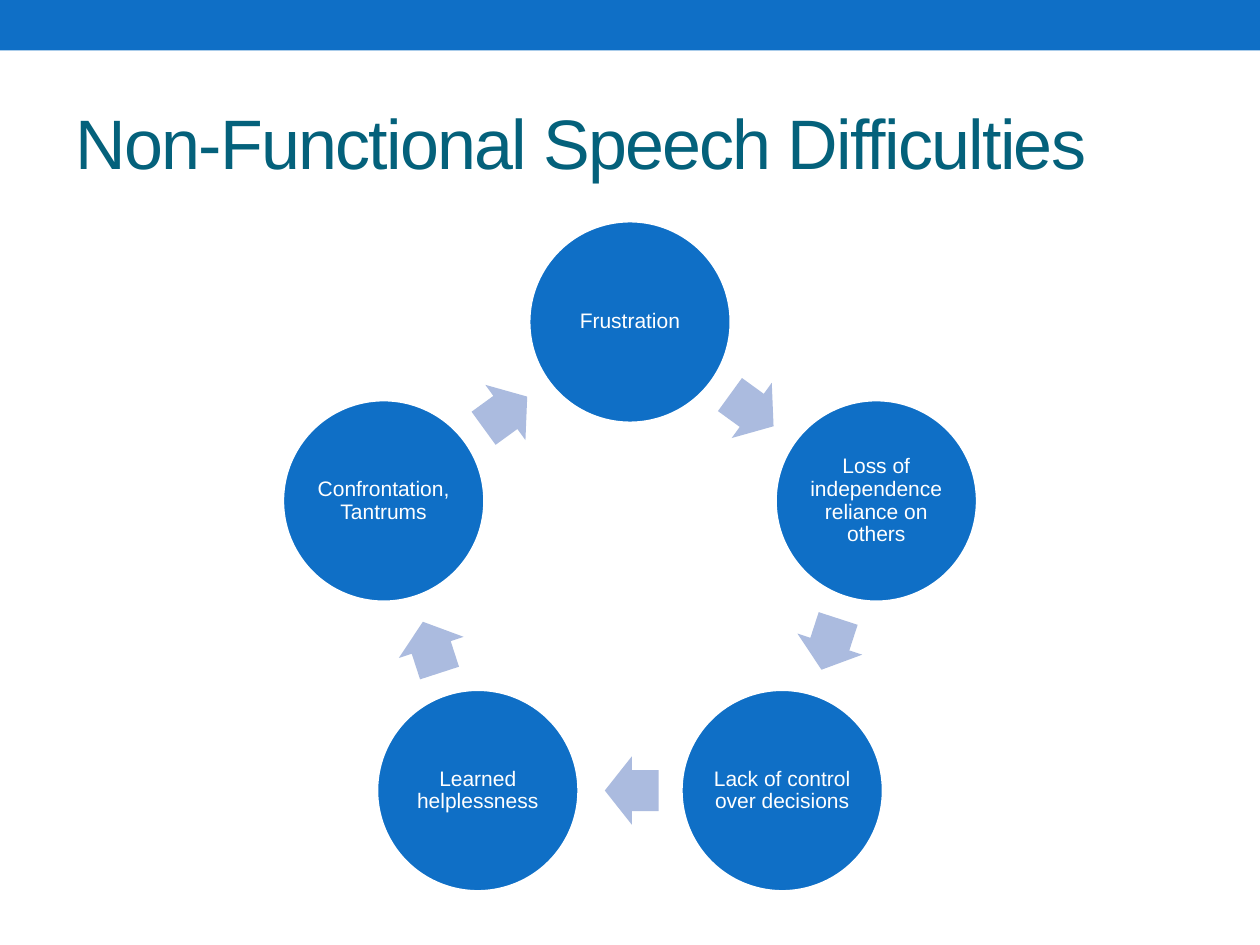
from math import cos, radians, sin

from pptx import Presentation
from pptx.dml.color import RGBColor
from pptx.enum.shapes import MSO_SHAPE as Shape
from pptx.enum.text import MSO_ANCHOR as Anchor, MSO_AUTO_SIZE as AutoSize, PP_ALIGN as Align
from pptx.util import Pt


def color(hex_string):
    return RGBColor.from_string(hex_string)


def write(frame, text, size, ink, font="Arial", align=Align.LEFT, inset=None,
          line_spacing=None, space_after=None, tracking=None):
    frame.word_wrap = True
    frame.auto_size = AutoSize.NONE
    frame.vertical_anchor = Anchor.MIDDLE
    if inset is not None:
        frame.margin_left = frame.margin_right = Pt(inset)
        frame.margin_top = frame.margin_bottom = Pt(inset)
    para = frame.paragraphs[0]
    para.alignment = align
    if line_spacing is not None:
        para.line_spacing = line_spacing
    if space_after is not None:
        para.space_after = Pt(space_after)
    span = para.add_run()
    span.text = text
    span.font.name = font
    span.font.size = Pt(size)
    span.font.color.rgb = color(ink)
    if tracking is not None:
        span.font._element.set("spc", str(int(tracking * 100)))


class CyclePage:
    blue = "0F6FC6"
    pale_blue = "ABBBDF"
    teal = "04617B"
    white = "FFFFFF"

    def __init__(self, page):
        self.page = page

    def title(self, text, left, top, width, height):
        box = self.page.shapes.title
        box.left, box.top, box.width, box.height = map(Pt, (left, top, width, height))
        write(box.text_frame, text, 40, self.teal, tracking=-1)

    def shape(self, kind, left, top, width, height, fill):
        box = self.page.shapes.add_shape(kind, *map(Pt, (left, top, width, height)))
        box.shadow.inherit = False
        box.fill.solid()
        box.fill.fore_color.rgb = color(fill)
        box.line.fill.background()
        return box

    def bar(self, width, height):
        self.shape(Shape.RECTANGLE, 0, 0, width, height, self.blue)

    def circle(self, text, x, y, size):
        box = self.shape(Shape.OVAL, x - size / 2, y - size / 2, size, size, self.blue)
        box.line.color.rgb = color(self.white)
        box.line.width = Pt(2.08)
        write(box.text_frame, text, 12, self.white, align=Align.CENTER,
              inset=1.5, line_spacing=0.9, space_after=4.2)

    def arrow(self, x, y, width, height, rotation):
        box = self.shape(Shape.RIGHT_ARROW, x - width / 2, y - height / 2,
                         width, height, self.pale_blue)
        box.adjustments[0] = 0.6
        box.adjustments[1] = 0.5
        box.rotation = rotation

    def cycle(self, labels, x, y, radius, circle_size, arrow_width, arrow_height, setback):
        step = 360 / len(labels)
        reach = radius * cos(radians(step / 2))
        for index, label in enumerate(labels):
            angle = radians(index * step)
            self.circle(label, x + radius * sin(angle), y - radius * cos(angle), circle_size)
            heading = (index + 0.5) * step
            turn = radians(heading)
            self.arrow(x + reach * sin(turn) - setback * cos(turn),
                       y - reach * cos(turn) - setback * sin(turn),
                       arrow_width, arrow_height, heading)


def main():
    deck = Presentation()
    deck.slide_width, deck.slide_height = Pt(720), Pt(540)
    page = CyclePage(deck.slides.add_slide(deck.slide_layouts[5]))
    page.bar(720, 28.8)
    page.title("Non-Functional Speech Difficulties", 36, 42, 648, 78)
    labels = [
        "Frustration",
        "Loss of independence reliance on others",
        "Lack of control over decisions",
        "Learned helplessness",
        "Confrontation, Tantrums",
    ]
    page.cycle(labels, x=360, y=332, radius=148, circle_size=115.8,
               arrow_width=30.8, arrow_height=39, setback=1)
    deck.save("out.pptx")


if __name__ == "__main__":
    main()
